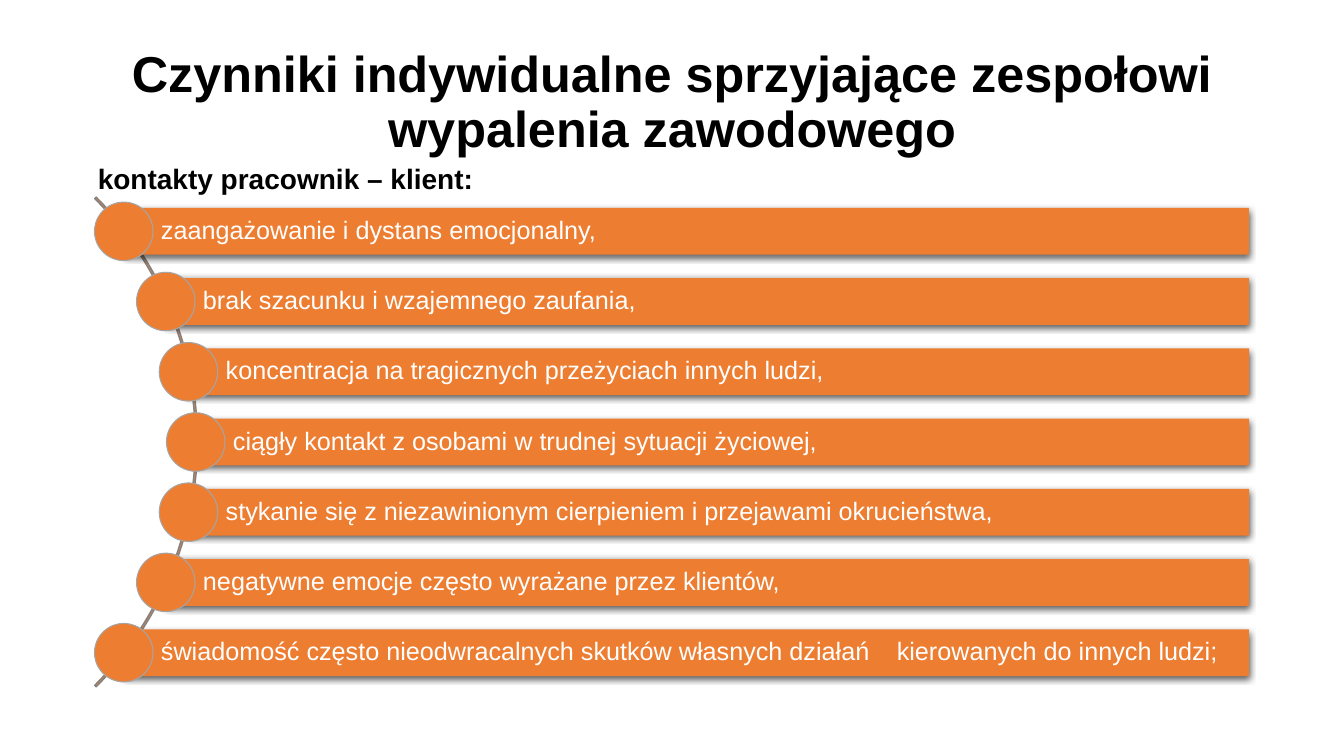
from dataclasses import dataclass
from math import sqrt

from lxml import etree
from pptx import Presentation
from pptx.dml.color import RGBColor
from pptx.enum.shapes import MSO_SHAPE
from pptx.enum.text import MSO_ANCHOR, MSO_AUTO_SIZE, PP_ALIGN
from pptx.oxml.ns import qn
from pptx.util import Emu, Inches, Pt

ARC, BAR, DOT = MSO_SHAPE.BLOCK_ARC, MSO_SHAPE.RECTANGLE, MSO_SHAPE.OVAL
MIDDLE, TOP = MSO_ANCHOR.MIDDLE, MSO_ANCHOR.TOP
LEFT, CENTER = PP_ALIGN.LEFT, PP_ALIGN.CENTER
FIXED_SIZE = MSO_AUTO_SIZE.NONE

# The slide is a grid of 160 columns by 90 rows of square cells.
CELL = Inches(7.5) / 90


@dataclass(frozen=True)
class Theme:
    font: str = "Arial"
    accent: str = "ED7D31"
    arc_line: str = "828282"
    dot_line: str = "A5A5A5"
    dark: str = "000000"
    light: str = "FFFFFF"
    title_size: int = 36
    heading_size: int = 20
    item_size: int = 18


@dataclass(frozen=True)
class Area:
    left: float
    top: float
    width: float
    height: float

    def lengths(self) -> tuple[Emu, ...]:
        return tuple(map(cells, (self.left, self.top, self.width, self.height)))


@dataclass(frozen=True)
class Factor:
    text: str
    tab: float = 0


THEME = Theme()
TITLE = "Czynniki indywidualne sprzyjające zespołowi wypalenia zawodowego"
HEADING = "kontakty pracownik – klient:"
FACTORS = [
    Factor("zaangażowanie i dystans emocjonalny,"),
    Factor("brak szacunku i wzajemnego zaufania,"),
    Factor("koncentracja na tragicznych przeżyciach innych ludzi,"),
    Factor("ciągły kontakt z osobami w trudnej sytuacji życiowej,"),
    Factor("stykanie się z niezawinionym cierpieniem i przejawami okrucieństwa,"),
    Factor("negatywne emocje często wyrażane przez klientów,"),
    Factor("świadomość często nieodwracalnych skutków własnych działań\t"
           "kierowanych do innych ludzi;", tab=87.6),
]

TITLE_AREA = Area(11.04, 4.2, 138, 16.32)
HEADING_AREA = Area(10.44, 18.6, 139.2, 5.88)
ARC_X, ARC_Y, ARC_DIAMETER = -17.7, 52.62, 82.44
DOT_ORBIT = 41
PITCH = 8.36
BAR_HEIGHT, BAR_RIGHT = 5.57, 148.7
DOT_SIZE = 6.97
TEXT_INDENT, TEXT_MARGIN = 4.43, 0.73


def cells(count: float) -> Emu:
    return Emu(round(count * CELL))


def style_paragraph(para, size: int, color: str, bold: bool, align, spacing: float) -> None:
    para.alignment = align
    para.line_spacing = spacing
    para.space_before = Pt(0)
    font = para.font
    font.name, font.size, font.bold = THEME.font, Pt(size), bold
    font.color.rgb = RGBColor.from_string(color)


def fill_placeholder(box, area: Area, text: str, size: int, anchor, align, spacing: float) -> None:
    box.left, box.top, box.width, box.height = area.lengths()
    frame = box.text_frame
    frame.auto_size = FIXED_SIZE
    frame.vertical_anchor = anchor
    frame.text = text
    para = frame.paragraphs[0]
    properties = para._p.get_or_add_pPr()
    properties.set("marL", "0")
    properties.set("indent", "0")
    etree.SubElement(properties, qn("a:buNone"))
    style_paragraph(para, size, THEME.dark, True, align, spacing)


def add_accent_shape(page, kind, area: Area, line: str = "", line_width: float = 0):
    shape = page.shapes.add_shape(kind, *area.lengths())
    shape.shadow.inherit = False
    shape.fill.solid()
    shape.fill.fore_color.rgb = RGBColor.from_string(THEME.accent)
    if line:
        shape.line.color.rgb = RGBColor.from_string(line)
        shape.line.width = Pt(line_width)
    else:
        shape.line.fill.background()
    return shape


def add_drop_shadow(shape) -> None:
    effects = shape._element.spPr.find(qn("a:effectLst"))
    shadow = etree.SubElement(effects, qn("a:outerShdw"), blurRad=str(Pt(4.5)),
                              dist=str(Pt(1.5)), dir="5400000", rotWithShape="0")
    color = etree.SubElement(shadow, qn("a:srgbClr"), val=THEME.dark)
    etree.SubElement(color, qn("a:alpha"), val="63000")


def add_arc(page) -> None:
    radius = ARC_DIAMETER / 2
    area = Area(ARC_X - radius, ARC_Y - radius, ARC_DIAMETER, ARC_DIAMETER)
    arc = add_accent_shape(page, ARC, area, THEME.arc_line, 1)
    for index, value in enumerate((189, 27, 0.003)):
        arc.adjustments[index] = value


def add_factor(page, factor: Factor, offset: float) -> None:
    """Place a bar and its dot on the arc, offset rows from the arc's centre."""
    x = ARC_X + sqrt(DOT_ORBIT ** 2 - offset ** 2)
    y = ARC_Y + offset
    bar = add_accent_shape(page, BAR, Area(x, y - BAR_HEIGHT / 2, BAR_RIGHT - x, BAR_HEIGHT))
    add_drop_shadow(bar)
    frame = bar.text_frame
    frame.word_wrap = True
    frame.vertical_anchor = MIDDLE
    frame.margin_left = cells(TEXT_INDENT)
    frame.margin_top = frame.margin_right = frame.margin_bottom = cells(TEXT_MARGIN)
    frame.text = factor.text
    para = frame.paragraphs[0]
    if factor.tab:
        tabs = etree.SubElement(para._p.get_or_add_pPr(), qn("a:tabLst"))
        etree.SubElement(tabs, qn("a:tab"), pos=str(cells(factor.tab)), algn="l")
    style_paragraph(para, THEME.item_size, THEME.light, False, LEFT, 0.9)
    radius = DOT_SIZE / 2
    add_accent_shape(page, DOT, Area(x - radius, y - radius, DOT_SIZE, DOT_SIZE),
                     THEME.dot_line, 0.75)


def main() -> None:
    deck = Presentation()
    deck.slide_width, deck.slide_height = cells(160), cells(90)
    page = deck.slides.add_slide(deck.slide_layouts[1])
    add_arc(page)
    middle = (len(FACTORS) - 1) / 2
    for index, factor in enumerate(FACTORS):
        add_factor(page, factor, (index - middle) * PITCH)
    fill_placeholder(page.placeholders[1], HEADING_AREA, HEADING,
                     THEME.heading_size, TOP, LEFT, 1)
    fill_placeholder(page.shapes.title, TITLE_AREA, TITLE,
                     THEME.title_size, MIDDLE, CENTER, 0.9)
    deck.save("out.pptx")


if __name__ == "__main__":
    main()
